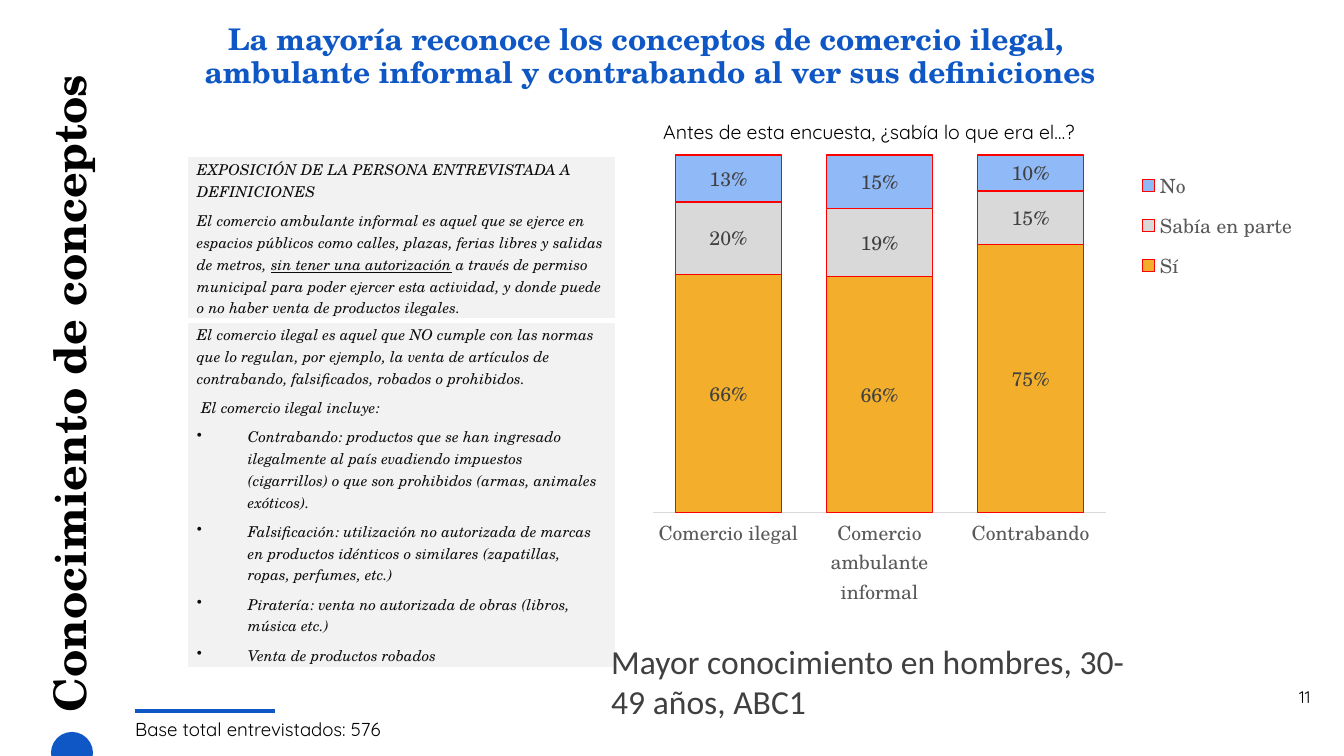
from lxml import etree
from pptx import Presentation
from pptx.chart.data import CategoryChartData as Data
from pptx.dml.color import RGBColor as Rgb
from pptx.enum.chart import XL_CHART_TYPE as Kind, XL_LEGEND_POSITION as Side, XL_TICK_MARK as Tick
from pptx.enum.shapes import MSO_CONNECTOR as Conn, MSO_SHAPE as Form
from pptx.enum.text import MSO_ANCHOR as Anchor, MSO_AUTO_SIZE as Fit, PP_ALIGN as Align
from pptx.oxml import parse_xml
from pptx.oxml.ns import nsdecls, qn
from pptx.util import Pt

PX = 914400 / 134.4
WIDE, HIGH = 1344, 756
SERIF, SANS, PLAIN = "TeX Gyre Schola", "Quicksand", "Calibri"
COLORS = {
    "white": "FFFFFF", "black": "000000", "blue": "0E57C4", "pale": "F2F2F2",
    "ink": "0D0D0D", "dark": "404040", "gray": "595959", "rule": "D9D9D9",
    "gold": "F3AF2C", "sky": "8FB9F7", "red": "FF0000",
}
DOTS = [
    "Contrabando: productos que se han ingresado ilegalmente al país evadiendo impuestos "
    "(cigarrillos) o que son prohibidos (armas, animales exóticos).",
    "Falsificación: utilización no autorizada de marcas en productos idénticos o similares "
    "(zapatillas, ropas, perfumes, etc.)",
    "Piratería: venta no autorizada de obras (libros, música etc.)",
    "Venta de productos robados",
]
STREET = [
    "EXPOSICIÓN DE LA PERSONA ENTREVISTADA A DEFINICIONES",
    ["El comercio ambulante informal es aquel que se ejerce en espacios públicos como calles, "
     "plazas, ferias libres y salidas de metros, ",
     "sin tener una autorización",
     " a través de permiso municipal para poder ejercer esta actividad, y donde puede o no "
     "haber venta de productos ilegales."],
]
TRADE = [
    "El comercio ilegal es aquel que NO cumple con las normas que lo regulan, por ejemplo, "
    "la venta de artículos de contrabando, falsificados, robados o prohibidos.",
    "\u00a0El comercio ilegal incluye:".replace("\u00a0", " "),
] + DOTS
GROUPS = ["Comercio ilegal", "Comercio ambulante informal", "Contrabando"]
SERIES = [
    ("Sí", (0.66, 0.66, 0.75), "gold"),
    ("Sabía en parte", (0.20, 0.19, 0.15), "rule"),
    ("No", (0.13, 0.15, 0.10), "sky"),
]


def px(n):
    return round(n * PX)


def place(box):
    return [px(n) for n in box]


def tint(name):
    return Rgb.from_string(COLORS[name])


def style(font, size, color, face=SERIF, bold=False, slant=False):
    font.size, font.name = Pt(size), face
    font.bold, font.italic = bold, slant
    font.color.rgb = tint(color)


def dot(para, gap=51):
    props = para._p.get_or_add_pPr()
    props.set("marL", str(px(gap)))
    props.set("indent", str(-px(gap)))
    etree.SubElement(props, qn("a:buChar")).set("char", "•")


def write(frame, lines, align=Align.LEFT, lead=None, pad=0, **look):
    frame.word_wrap = True
    for i, line in enumerate(lines):
        para = frame.paragraphs[0] if i == 0 else frame.add_paragraph()
        para.alignment = align
        if lead:
            para.line_spacing = lead
        if pad:
            para.space_after = Pt(pad)
            if i:
                para.space_before = Pt(pad)
        if line in DOTS:
            dot(para)
        parts = [line] if isinstance(line, str) else line
        for j, part in enumerate(parts):
            run = para.add_run()
            run.text = part
            style(run.font, **look)
            if j == 1:
                run.font.underline = True


def label(slide, box, lines, anchor=Anchor.TOP, **look):
    frame = slide.shapes.add_textbox(*place(box)).text_frame
    frame.vertical_anchor = anchor
    write(frame, lines, **look)


def banner(slide, box):
    title = slide.shapes.title
    title.left, title.top, title.width, title.height = place(box)
    title.rotation = 270
    frame = title.text_frame
    frame.auto_size, frame.vertical_anchor = Fit.NONE, Anchor.MIDDLE
    write(frame, ["Conocimiento de conceptos"], lead=0.9, size=24, color="black", bold=True)


def footer(slide, box):
    x, y, w, h = box
    ball = slide.shapes.add_shape(Form.OVAL, *place((x, y + 21, 42, 42)))
    ball.shadow.inherit = False
    ball.fill.solid()
    ball.fill.fore_color.rgb = tint("blue")
    ball.line.fill.background()
    rule = slide.shapes.add_connector(Conn.STRAIGHT, *place((x + 84, y, x + 224, y)))
    rule.line.color.rgb = tint("blue")
    rule.line.width = Pt(1.75)
    etree.SubElement(rule._element.spPr, qn("a:effectLst"))
    label(slide, (x + 71, y + 3, 677, 36), ["Base total entrevistados: 576"],
          lead=0.9, size=10, color="black", face=SANS)
    label(slide, (x + w - 48, y - 31, 48, 47), ["11"], size=9, color="black", face=SANS)


def edge(cell, sides):
    props = cell._tc.get_or_add_tcPr()
    for spot, (side, size) in enumerate(sides.items()):
        props.insert(spot, parse_xml(
            f'<a:{side} {nsdecls("a")} w="{Pt(size)}"><a:solidFill>'
            f'<a:srgbClr val="{COLORS["white"]}"/></a:solidFill></a:{side}>'))


def terms(slide, box, split):
    table = slide.shapes.add_table(2, 1, *place(box)).table
    table.columns[0].width = px(box[2])
    rows = ((STREET, split, 3, 1), (TRADE, box[3] - split, 1, 3))
    for i, (lines, high, low, top) in enumerate(rows):
        table.rows[i].height = px(high)
        cell = table.cell(i, 0)
        cell.fill.solid()
        cell.fill.fore_color.rgb = tint("pale")
        cell.vertical_anchor = Anchor.MIDDLE
        cell.margin_left = cell.margin_right = px(10)
        cell.margin_top = cell.margin_bottom = px(3)
        write(cell.text_frame, lines, pad=2, size=8, color="ink", slant=True)
        edge(cell, {"lnL": 1, "lnR": 1, "lnT": top, "lnB": low})


def pin(part, spot, sizes, inner=False):
    for old in part.findall(qn("c:layout")):
        part.remove(old)
    target = '<c:layoutTarget val="inner"/>' if inner else ""
    modes = "".join(f'<c:{k}Mode val="edge"/>' for k in "xy")
    vals = "".join(f'<c:{k} val="{v}"/>' for k, v in zip("xywh", sizes))
    part.insert(spot, parse_xml(
        f'<c:layout {nsdecls("c")}><c:manualLayout>{target}{modes}{vals}'
        f'</c:manualLayout></c:layout>'))


def graph(slide, box):
    data = Data(number_format="0%")
    data.categories = GROUPS
    for name, vals, _ in SERIES:
        data.add_series(name, vals)
    chart = slide.shapes.add_chart(Kind.COLUMN_STACKED_100, *place(box), data).chart
    style(chart.font, 10.5, "black")
    chart.has_title = False
    chart.has_legend = True
    chart.legend.position = Side.RIGHT
    chart.legend.include_in_layout = False
    style(chart.legend.font, 10.5, "gray")
    axis = chart.category_axis
    axis.major_tick_mark = axis.minor_tick_mark = Tick.NONE
    axis.format.line.color.rgb = tint("rule")
    axis.format.line.width = Pt(0.75)
    style(axis.tick_labels.font, 10.5, "gray")
    chart.value_axis.visible = False
    chart.value_axis.has_major_gridlines = False
    plot = chart.plots[0]
    plot.gap_width, plot.overlap, plot.vary_by_categories = 42, 100, False
    for part, (_, _, color) in zip(plot.series, SERIES):
        part.format.fill.solid()
        part.format.fill.fore_color.rgb = tint(color)
        part.format.line.color.rgb = tint("red")
        part.format.line.width = Pt(0.75)
        marks = part.data_labels
        marks.show_value = True
        marks.number_format, marks.number_format_is_linked = "0%", False
        style(marks.font, 10.5, "dark")
    pin(chart._chartSpace.chart.plotArea, 0, (0.07, 0.04, 0.61, 0.71), inner=True)
    pin(chart.legend._element, 1, (0.71, 0.05, 0.24, 0.26))


def build():
    deck = Presentation()
    deck.slide_width, deck.slide_height = px(WIDE), px(HIGH)
    slide = deck.slides.add_slide(deck.slide_layouts[5])
    footer(slide, (51, 711, 1283, 45))
    banner(slide, (-288, 343, 720, 46))
    label(slide, (114, 15, 1073, 85),
          ["La mayoría reconoce los conceptos de comercio ilegal, ",
           "ambulante informal y contrabando al ver sus definiciones"],
          anchor=Anchor.MIDDLE, align=Align.CENTER, lead=0.9, size=16, color="blue", bold=True)
    label(slide, (650, 116, 613, 63), ["Antes de esta encuesta, ¿sabía lo que era el…?"],
          lead=0.9, size=10.5, color="black", face=SANS)
    graph(slide, (601, 135, 743, 504))
    terms(slide, (187, 156, 429, 512), 165)
    label(slide, (598, 634, 564, 44), ["Mayor conocimiento en hombres, 30-49 años, ABC1"],
          size=18, color="dark", face=PLAIN)
    deck.save("out.pptx")


if __name__ == "__main__":
    build()
